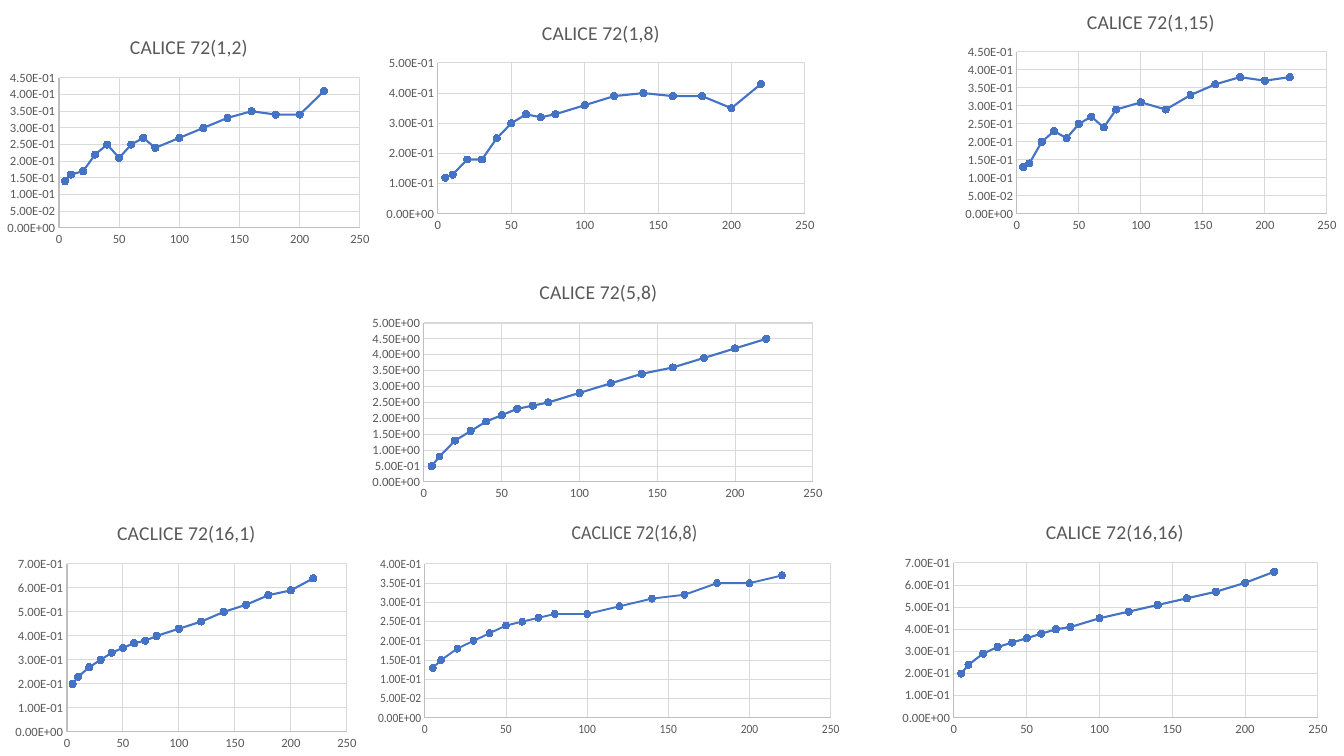
from lxml.etree import SubElement
from pptx import Presentation
from pptx.chart.data import XyChartData
from pptx.dml.color import RGBColor
from pptx.enum.chart import XL_CHART_TYPE, XL_MARKER_STYLE, XL_TICK_MARK
from pptx.oxml.ns import qn
from pptx.util import Emu, Pt

EMU_PER_PX = 914400 / 100.8

ENERGIES = [5, *range(10, 81, 10), *range(100, 221, 20)]

# title, chart box, plot box (left, top, width, height), axis maximum, axis step, values
CHARTS = [
    ("CACLICE 72(16,8)", (378, 505, 470, 237), (382, 564, 447, 154), 0.4, 0.05,
     [0.13, 0.15, 0.18, 0.2, 0.22, 0.24, 0.25, 0.26, 0.27, 0.27, 0.29, 0.31, 0.32, 0.35, 0.35, 0.37]),
    ("CALICE 72(16,16)", (894, 505, 442, 237), (954, 563, 364, 155), 0.7, 0.1,
     [0.2, 0.24, 0.29, 0.32, 0.34, 0.36, 0.38, 0.4, 0.41, 0.45, 0.48, 0.51, 0.54, 0.57, 0.61, 0.66]),
    ("CALICE 72(5,8)", (364, 265, 469, 241), (424, 323, 389, 159), 5, 0.5,
     [0.5, 0.8, 1.3, 1.6, 1.9, 2.1, 2.3, 2.4, 2.5, 2.8, 3.1, 3.4, 3.6, 3.9, 4.2, 4.5]),
    ("CALICE 72(1,15)", (958, -6, 386, 244), (1017, 52, 310, 162), 0.45, 0.05,
     [0.13, 0.14, 0.2, 0.23, 0.21, 0.25, 0.27, 0.24, 0.29, 0.31, 0.29, 0.33, 0.36, 0.38, 0.37, 0.38]),
    ("CALICE 72(1,8)", (378, 6, 446, 233), (438, 63, 367, 151), 0.5, 0.1,
     [0.12, 0.13, 0.18, 0.18, 0.25, 0.3, 0.33, 0.32, 0.33, 0.36, 0.39, 0.4, 0.39, 0.39, 0.35, 0.43]),
    ("CALICE 72(1,2)", (0, 20, 378, 232), (59, 78, 301, 150), 0.45, 0.05,
     [0.14, 0.16, 0.17, 0.22, 0.25, 0.21, 0.25, 0.27, 0.24, 0.27, 0.3, 0.33, 0.35, 0.34, 0.34, 0.41]),
    ("CACLICE 72(16,1)", (9, 505, 355, 251), (67, 564, 280, 168), 0.7, 0.1,
     [0.2, 0.23, 0.27, 0.3, 0.33, 0.35, 0.37, 0.38, 0.4, 0.43, 0.46, 0.5, 0.53, 0.57, 0.59, 0.64]),
]


def px(length):
    return Emu(round(length * EMU_PER_PX))


def color(hex_string):
    return RGBColor.from_string(hex_string)


class ChartSlide:
    FONT = "Calibri"
    TEXT, AXIS, GRID, SERIES = "595959", "BFBFBF", "D9D9D9", "4472C4"

    def __init__(self, presentation):
        self.slide = presentation.slides.add_slide(presentation.slide_layouts[6])

    def style_font(self, font, size):
        font.name, font.size, font.bold = self.FONT, Pt(size), False
        font.color.rgb = color(self.TEXT)

    def style_line(self, line, hex_string, width):
        line.color.rgb = color(hex_string)
        line.width = Pt(width)

    def style_axis(self, axis, maximum, step, number_format):
        axis.minimum_scale, axis.maximum_scale, axis.major_unit = 0, maximum, step
        axis.major_tick_mark = axis.minor_tick_mark = XL_TICK_MARK.NONE
        axis.has_major_gridlines = True
        self.style_line(axis.major_gridlines.format.line, self.GRID, 0.75)
        self.style_line(axis.format.line, self.AXIS, 0.75)
        self.style_font(axis.tick_labels.font, 9)
        axis.tick_labels.number_format = number_format
        axis.tick_labels.number_format_is_linked = False

    def style_series(self, series):
        series.smooth = False
        self.style_line(series.format.line, self.SERIES, 1.5)
        marker = series.marker
        marker.style, marker.size = XL_MARKER_STYLE.CIRCLE, 5
        marker.format.fill.solid()
        marker.format.fill.fore_color.rgb = color(self.SERIES)
        self.style_line(marker.format.line, self.SERIES, 0.75)

    def place(self, element, index, **settings):
        """Give a chart part a manual layout, as its child at index."""
        for layout in element.findall(qn("c:layout")):
            element.remove(layout)
        layout = SubElement(element, qn("c:layout"))
        element.insert(index, layout)
        manual = SubElement(layout, qn("c:manualLayout"))
        for name, value in settings.items():
            SubElement(manual, qn(f"c:{name}")).set("val", str(value))

    def add_scatter(self, title, box, plot_box, maximum, step, values):
        data = XyChartData()
        points = data.add_series("Series 1")
        for energy, value in zip(ENERGIES, values):
            points.add_data_point(energy, value)
        chart = self.slide.shapes.add_chart(
            XL_CHART_TYPE.XY_SCATTER_LINES, *map(px, box), data).chart
        chart.has_legend = False
        chart.font.name, chart.font.size = self.FONT, Pt(10)

        text_frame = chart.chart_title.text_frame
        text_frame.text = title
        self.style_font(text_frame.paragraphs[0].runs[0].font, 14)
        chart.chart_title.include_in_layout = False

        self.style_axis(chart.category_axis, 250, 50, "General")
        self.style_axis(chart.value_axis, maximum, step, "0.00E+00")
        plot = chart.plots[0]
        plot.vary_by_categories = False
        self.style_series(plot.series[0])

        left, top, width, height = box
        plot_left, plot_top, plot_width, plot_height = plot_box
        plot_area = chart.element.find(f".//{qn('c:plotArea')}")
        self.place(plot_area, 0, layoutTarget="inner", xMode="edge", yMode="edge",
                   x=round((plot_left - left) / width, 4), y=round((plot_top - top) / height, 4),
                   w=round(plot_width / width, 4), h=round(plot_height / height, 4))


def main():
    presentation = Presentation()
    presentation.slide_width, presentation.slide_height = px(1344), px(756)
    chart_slide = ChartSlide(presentation)
    for chart in CHARTS:
        chart_slide.add_scatter(*chart)
    presentation.save("out.pptx")


if __name__ == "__main__":
    main()
